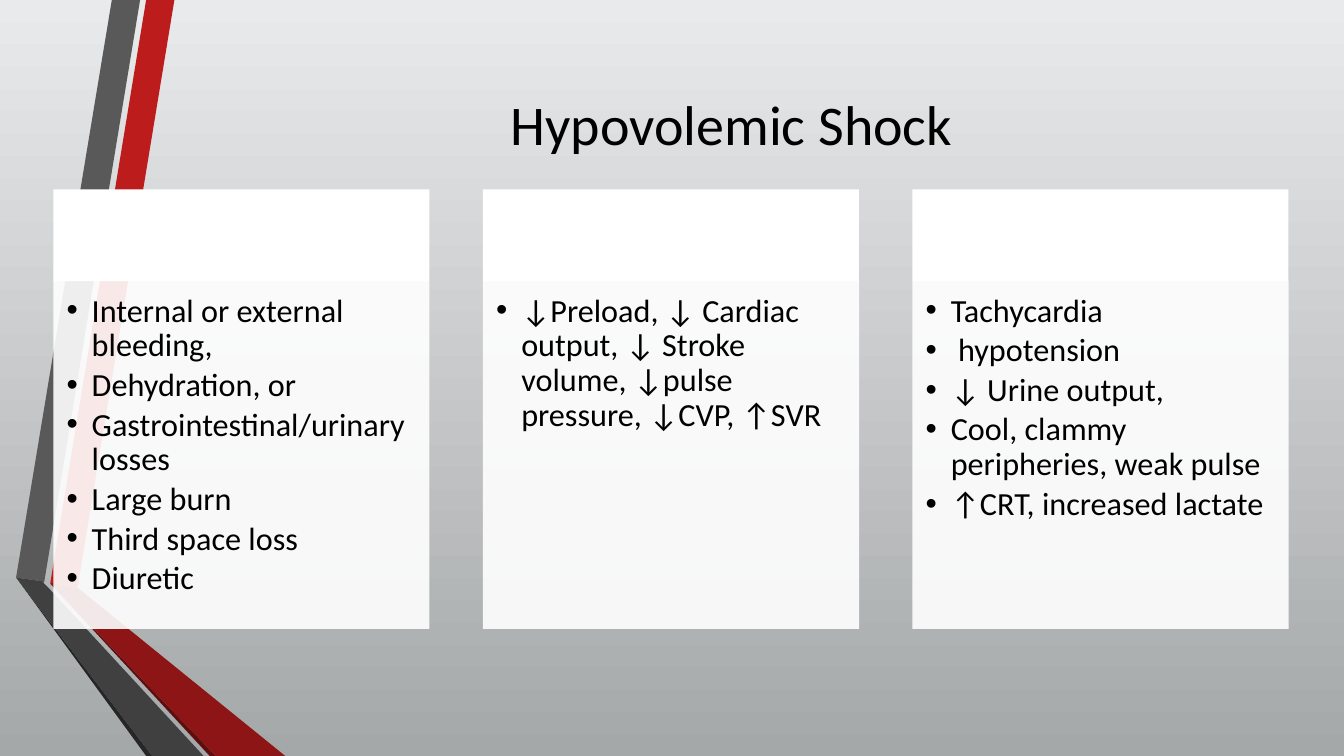
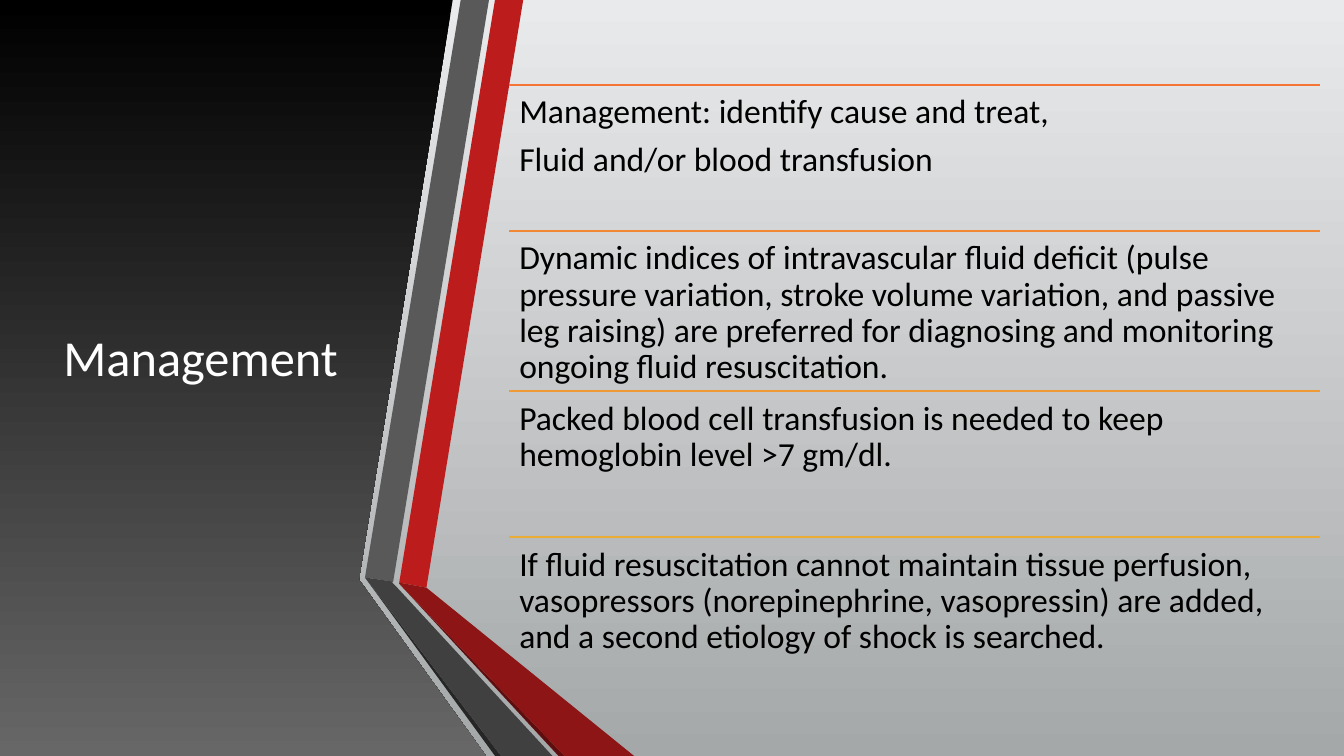
"""Build two slides on hypovolemic shock and its management."""
import dataclasses
import itertools
import typing

import lxml.etree
import pptx
import pptx.dml.color
import pptx.dml.fill
import pptx.enum.shapes
import pptx.enum.text
import pptx.oxml.ns
import pptx.shapes.base
import pptx.slide
import pptx.util

PX = 9144
WIDE, HIGH = 1333, 750
FONT = "Calibri"
BLACK, WHITE = "000000", "FFFFFF"
PAPER = ("E9EAEB", "A5A8A9")
NIGHT = (BLACK, "676767")
LAYOUT = 4

Dots = list[tuple[int, int]]


@dataclasses.dataclass
class Box:
    left: int
    top: int
    width: int
    height: int


@dataclasses.dataclass
class Band:
    tint: str
    dots: Dots


@dataclasses.dataclass
class Style:
    size: int
    after: float
    inset: tuple[int, int, int, int]
    hang: int
    mark: str


@dataclasses.dataclass
class Note:
    tint: str
    height: int
    lines: list[str]


BANDS = [
    Band("BC1C1C", [(50, 578), (77, 583), (173, 0), (145, 0)]),
    Band("595959", [(139, 0), (111, 0), (16, 573), (44, 577)]),
    Band("262626", [(16, 573), (145, 750), (151, 750)]),
    Band("5E0E0E", [(50, 579), (208, 750), (214, 750)]),
    Band("8D1515", [(50, 579), (214, 750), (283, 750), (77, 583), (50, 578)]),
    Band("404040", [(202, 750), (48, 583), (43, 578), (44, 577), (16, 573),
                    (151, 750)]),
]
PANEL = [(353, 0), (449, 0), (356, 575), (482, 750), (0, 750), (0, 0)]
SHIFT = 346

LIST = Style(23, 3.45, (13, 13, 18, 20), 25, "•")
PLAIN = Style(24, 8.4, (10, 10, 10, 10), 0, "")

CARDS = [
    ["Internal or external bleeding,", "Dehydration, or",
     "Gastrointestinal/urinary losses", "Large burn", "Third space loss",
     "Diuretic"],
    ["↓Preload, ↓ Cardiac output, ↓ Stroke volume, ↓pulse pressure, "
     "↓CVP, ↑SVR"],
    ["Tachycardia", " hypotension", "↓ Urine output,",
     "Cool, clammy peripheries, weak pulse", "↑CRT, increased lactate"],
]
NOTES = [
    Note("F67534", 145, ["Management: identify cause and treat,",
                         "Fluid and/or blood transfusion"]),
    Note("F28834", 159, [
        "Dynamic indices of intravascular fluid deficit (pulse pressure "
        "variation, stroke volume variation, and passive leg raising) are "
        "preferred for diagnosing and monitoring ongoing fluid "
        "resuscitation."]),
    Note("EE9B35", 145, ["Packed blood cell transfusion is needed to keep "
                         "hemoglobin level >7 gm/dl."]),
    Note("EAAC35", 145, [
        "If fluid resuscitation cannot maintain tissue perfusion, "
        "vasopressors (norepinephrine, vasopressin) are added, and a second "
        "etiology of shock is searched."]),
]


def px(size: int) -> pptx.util.Emu:
    return pptx.util.Emu(size * PX)


def rgb(tint: str) -> pptx.dml.color.RGBColor:
    return pptx.dml.color.RGBColor.from_string(tint)


def add(node: typing.Any, tag: str, **attrs: str) -> None:
    lxml.etree.SubElement(node, pptx.oxml.ns.qn(tag), **attrs)


def paint(fill: pptx.dml.fill.FillFormat, tint: str) -> None:
    fill.solid()
    fill.fore_color.rgb = rgb(tint)


def fade(fill: pptx.dml.fill.FillFormat, tints: tuple[str, str]) -> None:
    fill.gradient()
    fill.gradient_angle = 270
    for stop, tint in zip(fill.gradient_stops, tints):
        stop.color.rgb = rgb(tint)


def place(shape: pptx.shapes.base.BaseShape, box: Box) -> None:
    shape.left, shape.top = px(box.left), px(box.top)
    shape.width, shape.height = px(box.width), px(box.height)
    shape.element.getparent().append(shape.element)


def trace(slide: pptx.slide.Slide, dots: Dots, shift: int = 0) -> typing.Any:
    moved = [(x + shift, y) for x, y in dots]
    pen = slide.shapes.build_freeform(*moved[0], scale=PX)
    pen.add_line_segments(moved[1:], close=True)
    form = pen.convert_to_shape()
    form.shadow.inherit = False
    form.line.fill.background()
    return form


def sash(slide: pptx.slide.Slide, shift: int = 0) -> None:
    for band in BANDS:
        paint(trace(slide, band.dots, shift).fill, band.tint)


def head(slide: pptx.slide.Slide, text: str, box: Box, size: int,
         tint: str) -> None:
    title = slide.shapes.title
    place(title, box)
    frame = title.text_frame
    frame.text = text
    frame.word_wrap = True
    frame.auto_size = pptx.enum.text.MSO_AUTO_SIZE.NONE
    frame.vertical_anchor = pptx.enum.text.MSO_ANCHOR.MIDDLE
    line = frame.paragraphs[0]
    line.alignment = pptx.enum.text.PP_ALIGN.CENTER
    ink(line, size, tint)


def ink(line: typing.Any, size: int, tint: str) -> None:
    for run in line.runs:
        run.font.name = FONT
        run.font.size = pptx.util.Pt(size)
        run.font.bold = False
        run.font.color.rgb = rgb(tint)


def write(shape: typing.Any, lines: list[str], style: Style) -> None:
    frame = shape.text_frame
    frame.text = "\n".join(lines)
    frame.word_wrap = True
    frame.auto_size = pptx.enum.text.MSO_AUTO_SIZE.NONE
    frame.vertical_anchor = pptx.enum.text.MSO_ANCHOR.TOP
    (frame.margin_left, frame.margin_top, frame.margin_right,
     frame.margin_bottom) = map(px, style.inset)
    for line in frame.paragraphs:
        line.alignment = pptx.enum.text.PP_ALIGN.LEFT
        line.line_spacing = 0.9
        line.space_before = pptx.util.Pt(0)
        line.space_after = pptx.util.Pt(style.after)
        ink(line, style.size, BLACK)
        props = line._p.get_or_add_pPr()
        props.set("marL", str(px(style.hang)))
        props.set("indent", str(px(-style.hang)))
        if style.mark:
            add(props, "a:buFont", typeface="Arial")
            add(props, "a:buChar", char=style.mark)
        else:
            add(props, "a:buNone")


def holds(slide: pptx.slide.Slide, count: int) -> list[typing.Any]:
    found = [one for one in slide.placeholders
             if one.placeholder_format.idx > 0]
    for spare in found[count:]:
        spare.element.getparent().remove(spare.element)
    return found[:count]


def card(slide: pptx.slide.Slide, hold: typing.Any, left: int,
         lines: list[str]) -> None:
    top, width, cap = 188, 373, 91
    lid = slide.shapes.add_shape(pptx.enum.shapes.MSO_SHAPE.RECTANGLE,
                                 px(left), px(top), px(width), px(cap))
    lid.shadow.inherit = False
    lid.line.fill.background()
    paint(lid.fill, WHITE)
    place(hold, Box(left, top + cap, width, 345))
    paint(hold.fill, WHITE)
    tone = hold.element.spPr.find(".//" + pptx.oxml.ns.qn("a:srgbClr"))
    add(tone, "a:alpha", val="90000")
    write(hold, lines, LIST)


def rule(slide: pptx.slide.Slide, left: int, top: int, width: int,
         tint: str) -> None:
    line = slide.shapes.add_connector(
        pptx.enum.shapes.MSO_CONNECTOR.STRAIGHT,
        px(left), px(top), px(left + width), px(top))
    line.line.color.rgb = rgb(tint)
    line.line.width = pptx.util.Pt(1.25)
    add(line.element.spPr, "a:effectLst")


def shock(slide: pptx.slide.Slide) -> None:
    sash(slide)
    head(slide, "Hypovolemic Shock", Box(193, 75, 1065, 94), 40, BLACK)
    lefts = itertools.count(53, 426)
    for hold, left, lines in zip(holds(slide, len(CARDS)), lefts, CARDS):
        card(slide, hold, left, lines)


def care(slide: pptx.slide.Slide) -> None:
    fade(trace(slide, PANEL).fill, NIGHT)
    head(slide, "Management", Box(24, 75, 350, 558), 36, WHITE)
    sash(slide, SHIFT)
    left, top, width = 505, 84, 804
    for hold, note in zip(holds(slide, len(NOTES)), NOTES):
        rule(slide, left, top, width, note.tint)
        place(hold, Box(left, top, width, note.height))
        write(hold, note.lines, PLAIN)
        top += note.height


def main() -> None:
    deck = pptx.Presentation()
    deck.slide_width, deck.slide_height = px(WIDE), px(HIGH)
    fade(deck.slide_master.background.fill, PAPER)
    for draw in (shock, care):
        draw(deck.slides.add_slide(deck.slide_layouts[LAYOUT]))
    deck.save("out.pptx")


if __name__ == "__main__":
    main()
